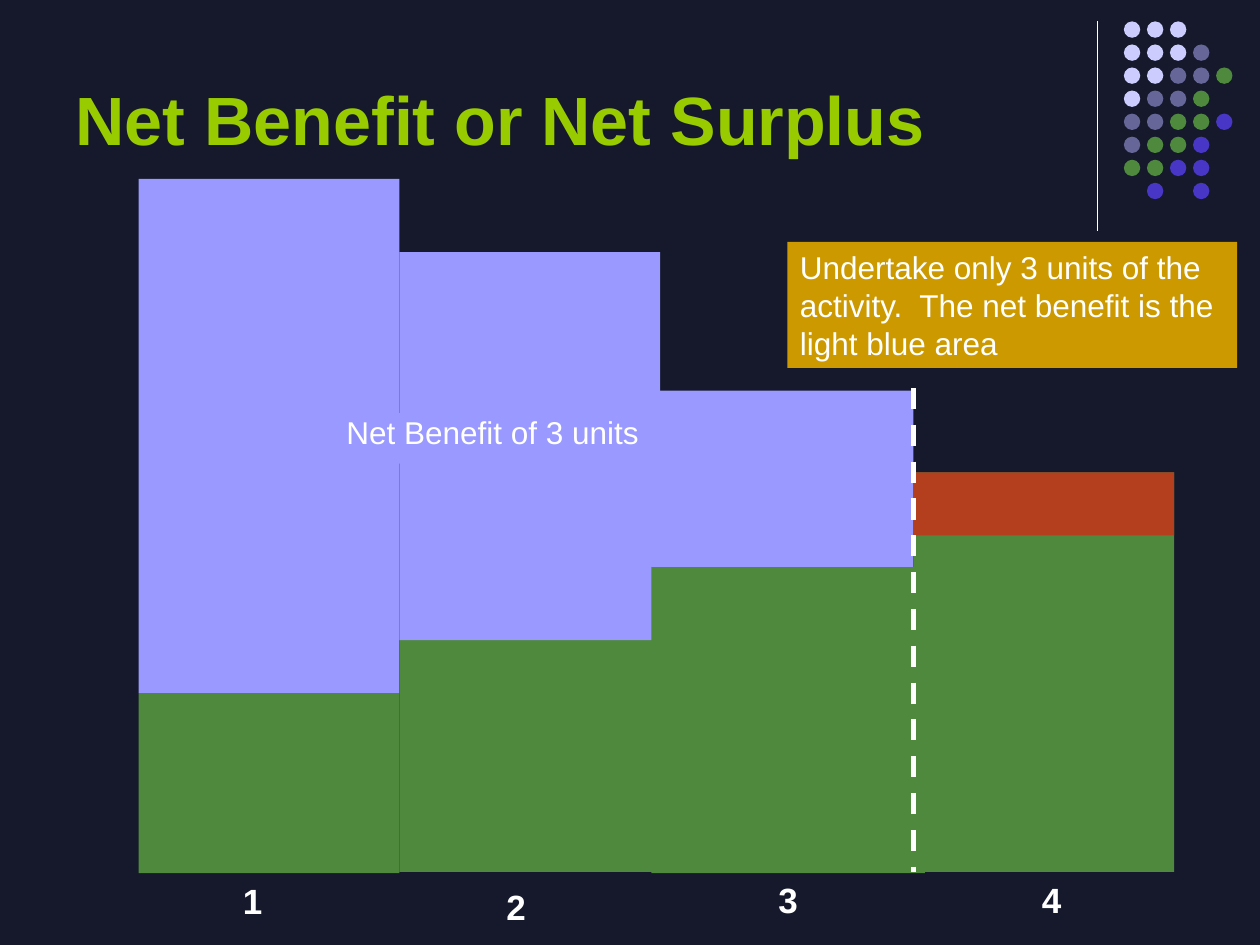
from pptx import Presentation
from pptx.dml.color import RGBColor
from pptx.enum.dml import MSO_LINE
from pptx.enum.shapes import MSO_CONNECTOR, MSO_SHAPE
from pptx.enum.text import MSO_ANCHOR, MSO_AUTO_SIZE, PP_ALIGN
from pptx.oxml.ns import qn
from pptx.util import Inches, Pt
from lxml.etree import SubElement

NAVY = RGBColor(0x15, 0x19, 0x2B)
WHITE = RGBColor(0xFF, 0xFF, 0xFF)
LIME = RGBColor(0x99, 0xCC, 0x00)
GREEN = RGBColor(0x4F, 0x89, 0x3D)
BLUE = RGBColor(0x99, 0x99, 0xFF)
RED = RGBColor(0xB3, 0x3F, 0x1F)
GOLD = RGBColor(0xCC, 0x99, 0x00)
DOTS = {"a": RGBColor(0xCC, 0xCC, 0xFF), "b": RGBColor(0x66, 0x66, 0x99),
        "c": GREEN, "d": RGBColor(0x48, 0x37, 0xC7)}

COLS, ROWS = 100, 75
CELL = Inches(0.1)

TITLE = "Net Benefit or Net Surplus"
LABEL = "Net Benefit of 3 units"
NOTE = "Undertake only 3 units of the activity.  The net benefit is the light blue area"
PATTERN = ["aaa", "aaab", "aabbc", "abbc", "bbccd", "bccd", "ccdd", " d d"]
BARS = [
    (11, 55, 20.7, 14.3, GREEN), (11, 14.2, 20.7, 40.8, BLUE),
    (31.7, 50.8, 20.7, 18.4, GREEN), (31.7, 20, 20.7, 30.8, BLUE),
    (51.7, 45, 21.7, 24.3, GREEN), (51.7, 31, 20.8, 14, BLUE),
    (72.5, 37.5, 20.7, 31.7, GREEN), (72.5, 37.5, 20.7, 5, RED),
]
UNITS = [("1", 18.3, 69.3), ("2", 39.2, 69.8), ("3", 60.8, 69.2), ("4", 81.7, 69.2)]
LINES = [(87.1, 1.7, 18.3, {"width": Pt(0.75)}),
         (72.5, 30.8, 69.2, {"width": Pt(3), "dash_style": MSO_LINE.DASH})]

HEAD = {"size": Pt(39), "bold": True, "name": "Arial"}
BODY = {"size": Pt(18), "bold": False, "name": "Arial"}
MARK = {"size": Pt(20), "bold": True, "name": "Arial"}


def grid(*cells):
    """Turn grid cells into lengths."""
    return [round(n * CELL) for n in cells]


def apply(item, form):
    """Set each attribute named in a dict."""
    for key, value in form.items():
        setattr(item, key, value)


def block(slide, kind, box, color):
    """Add a plain filled shape."""
    shape = slide.shapes.add_shape(kind, *grid(*box))
    shape.shadow.inherit = False
    shape.fill.solid()
    shape.fill.fore_color.rgb = color
    shape.line.fill.background()
    return shape


def write(shape, text, form, color=WHITE, **frame):
    """Fill a shape with one left-aligned paragraph."""
    apply(shape.text_frame, frame)
    para = shape.text_frame.paragraphs[0]
    para.alignment = PP_ALIGN.LEFT
    run = para.add_run()
    run.text = text
    apply(run.font, form)
    run.font.color.rgb = color


def rule(slide, x, top, end, form):
    """Add a vertical white line."""
    line = slide.shapes.add_connector(MSO_CONNECTOR.STRAIGHT, *grid(x, top, x, end))
    line.line.color.rgb = WHITE
    apply(line.line, form)
    SubElement(line._element.spPr, qn("a:effectLst"))


def main():
    """Build the net benefit slide."""
    deck = Presentation()
    apply(deck, {"slide_width": COLS * CELL, "slide_height": ROWS * CELL})
    slide = deck.slides.add_slide(deck.slide_layouts[5])
    slide.background.fill.solid()
    slide.background.fill.fore_color.rgb = NAVY

    title = slide.shapes.title
    apply(title, dict(zip(("left", "top", "width", "height"), grid(5, 0.6, 90, 12.5))))
    write(title, TITLE, HEAD, LIME, vertical_anchor=MSO_ANCHOR.BOTTOM,
          auto_size=MSO_AUTO_SIZE.NONE)

    rule(slide, *LINES[0])
    for row, codes in enumerate(PATTERN):
        for col, code in enumerate(codes):
            if code in DOTS:
                box = (89.2 + col * 1.83, 1.7 + row * 1.83, 1.3, 1.3)
                block(slide, MSO_SHAPE.OVAL, box, DOTS[code])

    for *box, color in BARS:
        block(slide, MSO_SHAPE.RECTANGLE, box, color)
    label = block(slide, MSO_SHAPE.RECTANGLE, (27.5, 32.8, 23.4, 4), BLUE)
    write(label, LABEL, BODY, word_wrap=False, vertical_anchor=MSO_ANCHOR.TOP,
          margin_left=0, margin_top=0, margin_right=0, margin_bottom=0)

    for text, left, top in UNITS:
        mark = slide.shapes.add_textbox(*grid(left, top, 3.6, 4.3))
        write(mark, text, MARK, word_wrap=False)
    note = block(slide, MSO_SHAPE.RECTANGLE, (62.5, 19.2, 35.7, 10), GOLD)
    write(note, NOTE, BODY, word_wrap=True, vertical_anchor=MSO_ANCHOR.TOP)
    rule(slide, *LINES[1])
    deck.save("out.pptx")


if __name__ == "__main__":
    main()
